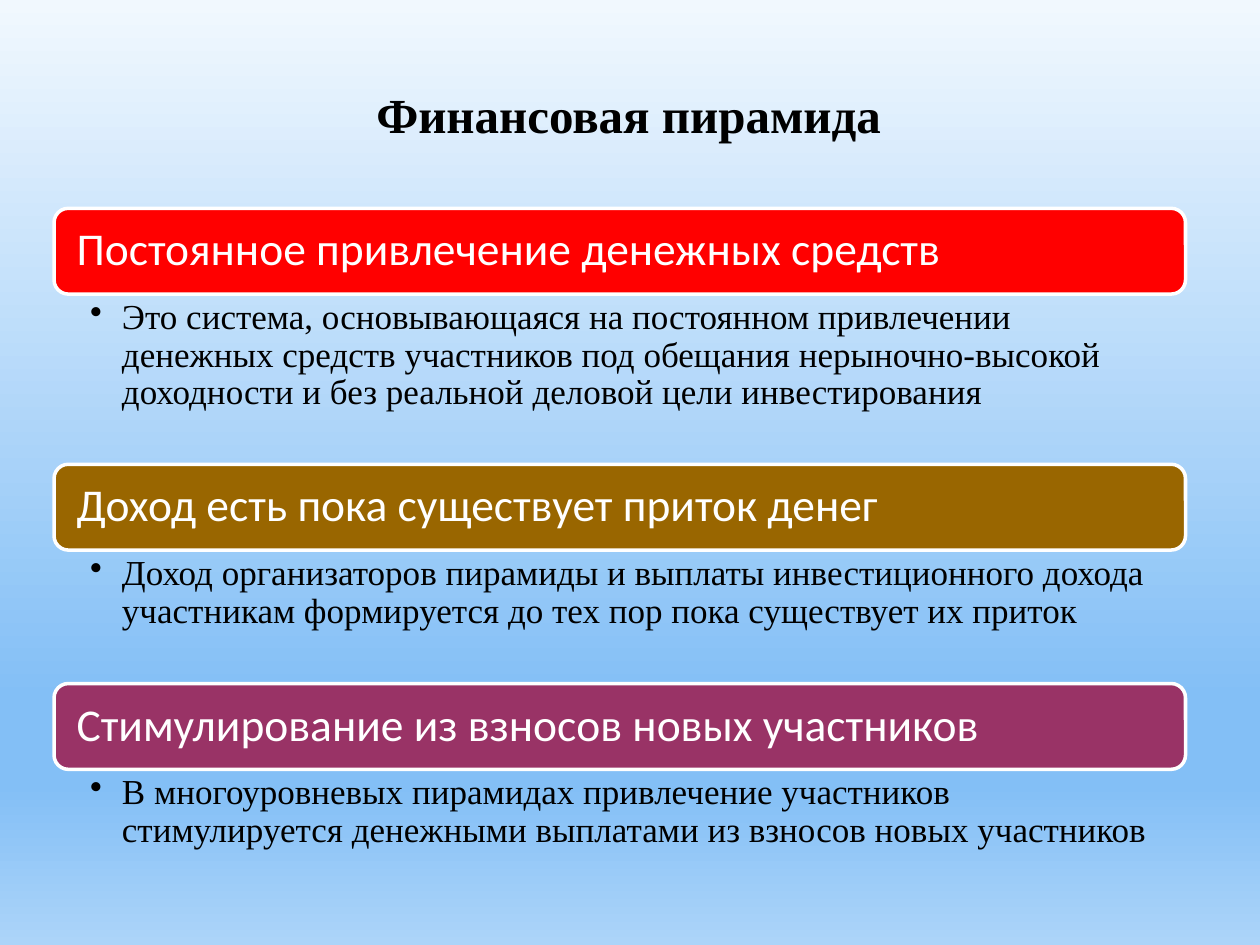
from lxml import etree
from pptx import Presentation
from pptx.dml.color import RGBColor
from pptx.enum.shapes import MSO_SHAPE
from pptx.enum.text import MSO_ANCHOR, MSO_AUTO_SIZE, PP_ALIGN
from pptx.oxml.ns import qn
from pptx.util import Cm, Pt

ROUNDED = MSO_SHAPE.ROUNDED_RECTANGLE
TOP, MIDDLE = MSO_ANCHOR.TOP, MSO_ANCHOR.MIDDLE
LEFT, CENTER = PP_ALIGN.LEFT, PP_ALIGN.CENTER

BLACK = RGBColor(0x00, 0x00, 0x00)
WHITE = RGBColor(0xFF, 0xFF, 0xFF)
RED = RGBColor(0xFF, 0x00, 0x00)
BROWN = RGBColor(0x99, 0x66, 0x00)
PLUM = RGBColor(0x99, 0x33, 0x66)
SKY_STOPS = [(0, "F1F8FE"), (74, "83BFF6"), (83, "83BFF6"), (100, "ACD4F9")]

SERIF, SANS = "Times New Roman", "Calibri"

TITLE = "Финансовая пирамида"
# heading, bar colour, explanation, height of the explanation in cm
SECTIONS = [
    ("Постоянное привлечение денежных средств", RED,
     "Это система, основывающаяся на постоянном привлечении денежных средств "
     "участников под обещания нерыночно-высокой доходности и без реальной "
     "деловой цели инвестирования", 3.43),
    ("Доход есть пока существует приток денег", BROWN,
     "Доход организаторов пирамиды и выплаты инвестиционного дохода участникам "
     "формируется до тех пор пока существует их приток", 2.69),
    ("Стимулирование из взносов новых участников", PLUM,
     "В многоуровневых пирамидах привлечение участников стимулируется "
     "денежными выплатами из взносов новых участников", 1.73),
]

SECTION_LEFT, SECTION_WIDTH, FIRST_TOP, BAR_HEIGHT = 1.09, 22.81, 4.2, 1.73
BULLET_INDENT = 0.64


def paint_background(page):
    fill = page.background.fill
    fill.gradient()
    fill.gradient_angle = 270
    stops = page.element.find(".//" + qn("a:gsLst"))
    for stop in list(stops):
        stops.remove(stop)
    for percent, colour in SKY_STOPS:
        stop = etree.SubElement(stops, qn("a:gs"), pos=str(percent * 1000))
        etree.SubElement(stop, qn("a:srgbClr"), val=colour)


def write(box, text, *, font, size, colour, bold=False, align=LEFT, anchor=TOP,
          margins=(0.25, 0.13, 0.25, 0.13), spacing=0.9):
    """Fill a shape with one paragraph; margins are left, top, right, bottom in cm."""
    frame = box.text_frame
    frame.word_wrap = True
    frame.auto_size = MSO_AUTO_SIZE.NONE
    frame.vertical_anchor = anchor
    (frame.margin_left, frame.margin_top,
     frame.margin_right, frame.margin_bottom) = map(Cm, margins)
    para = frame.paragraphs[0]
    para.alignment = align
    para.line_spacing = spacing
    span = para.add_run()
    span.text = text
    span.font.name = font
    span.font.size = Pt(size)
    span.font.bold = bold
    span.font.color.rgb = colour
    return para


def add_bullet(para):
    para.level = 1
    properties = para._p.get_or_add_pPr()
    properties.set("marL", str(Cm(BULLET_INDENT)))
    properties.set("indent", str(-Cm(BULLET_INDENT)))
    etree.SubElement(properties, qn("a:buChar"), char="•")


def add_section(page, top, heading, colour, explanation, height):
    bar = page.shapes.add_shape(ROUNDED, Cm(SECTION_LEFT), Cm(top),
                                Cm(SECTION_WIDTH), Cm(BAR_HEIGHT))
    bar.shadow.inherit = False
    bar.fill.solid()
    bar.fill.fore_color.rgb = colour
    bar.line.color.rgb = WHITE
    bar.line.width = Pt(2)
    write(bar, heading, font=SANS, size=26, colour=WHITE, anchor=MIDDLE,
          margins=(0.37, 0.37, 0.37, 0.37))
    body = page.shapes.add_textbox(Cm(SECTION_LEFT), Cm(top + BAR_HEIGHT),
                                   Cm(SECTION_WIDTH), Cm(height))
    add_bullet(write(body, explanation, font=SERIF, size=20, colour=BLACK,
                     margins=(0.73, 0.1, 0.5, 0.1)))


def main():
    deck = Presentation()
    deck.slide_width, deck.slide_height = Cm(25.4), Cm(19.05)
    page = deck.slides.add_slide(deck.slide_layouts[5])
    paint_background(page)

    title = page.shapes.title
    title.left, title.top, title.width, title.height = map(Cm, (4.9, 1.57, 15.54, 1.45))
    write(title, TITLE, font=SERIF, size=28, colour=BLACK, bold=True,
          align=CENTER, spacing=1.0)

    top = FIRST_TOP
    for heading, colour, explanation, height in SECTIONS:
        add_section(page, top, heading, colour, explanation, height)
        top += BAR_HEIGHT + height
    deck.save("out.pptx")


if __name__ == "__main__":
    main()
